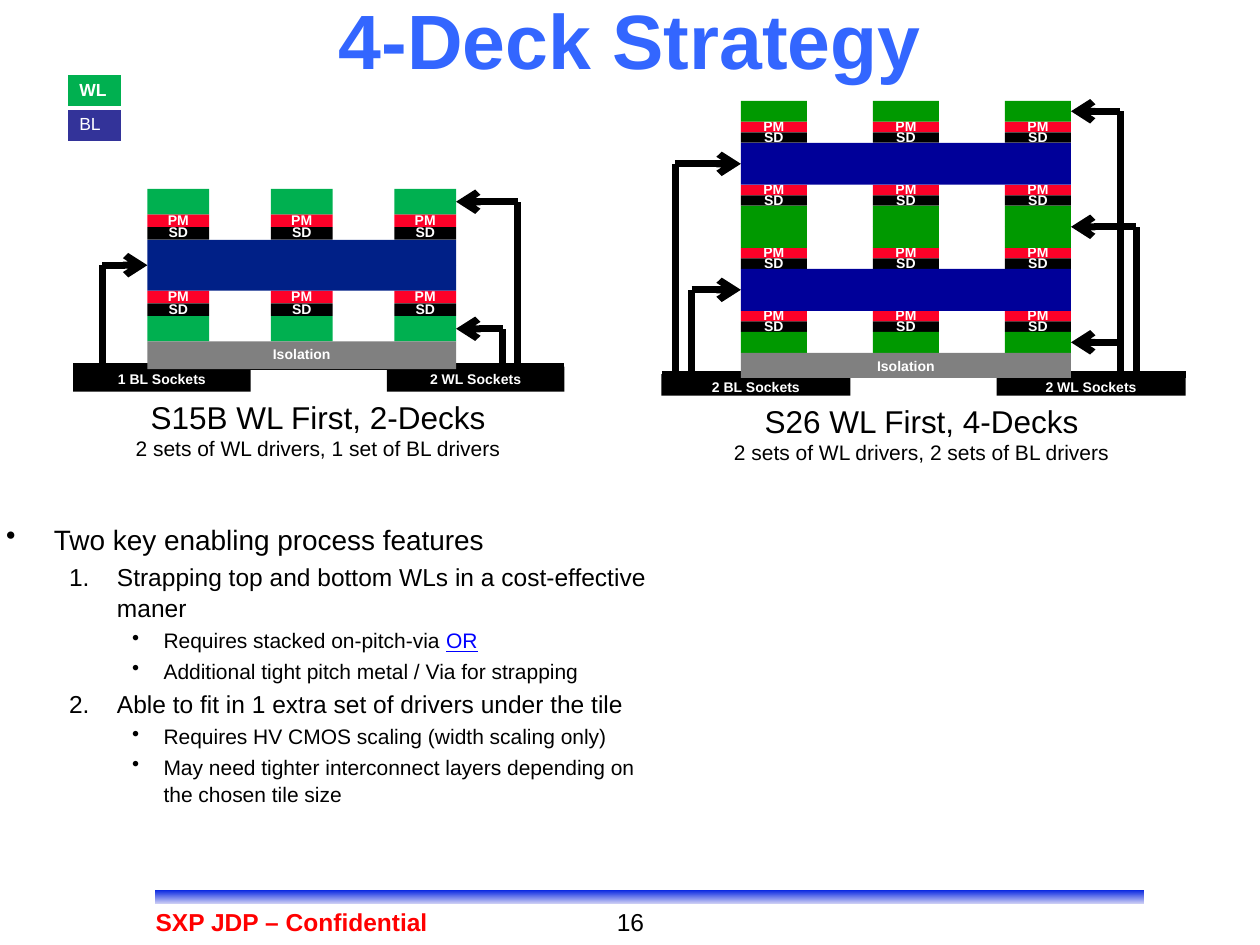
from dataclasses import dataclass

from lxml.etree import SubElement
from pptx import Presentation
from pptx.dml.color import RGBColor
from pptx.enum.shapes import MSO_CONNECTOR as CONN, MSO_SHAPE as SHAPE
from pptx.enum.text import MSO_ANCHOR as ANCHOR, PP_ALIGN as ALIGN
from pptx.oxml.ns import qn
from pptx.util import Inches, Pt

BLACK = RGBColor(0x00, 0x00, 0x00)
WHITE = RGBColor(0xFF, 0xFF, 0xFF)
RED = RGBColor(0xFF, 0x00, 0x00)
PM_RED = RGBColor(0xFC, 0x01, 0x28)
GRAY = RGBColor(0x80, 0x80, 0x80)
TITLE_BLUE = RGBColor(0x33, 0x66, 0xFF)
LINK_BLUE = RGBColor(0x00, 0x00, 0xFF)
KEY_GREEN = RGBColor(0x00, 0xB0, 0x50)
KEY_BLUE = RGBColor(0x33, 0x33, 0x99)
NAVY = RGBColor(0x00, 0x20, 0x87)
DEEP_GREEN = RGBColor(0x00, 0x99, 0x00)
DEEP_BLUE = RGBColor(0x00, 0x00, 0x99)
BAR_TOP = RGBColor(0x00, 0x20, 0xE0)
BAR_BOTTOM = RGBColor(0xDA, 0xDA, 0xF6)

COLUMNS = 5
LEVELS = [(16, 0.38, -0.38), (14, 0.88, -0.38), (12, 1.25, -0.25)]
FEATURES = [
    (0, ["Two key enabling process features"]),
    (1, ["Strapping top and bottom WLs in a cost-effective maner"]),
    (2, ["Requires stacked on-pitch-via ", "OR"]),
    (2, ["Additional tight pitch metal / Via for strapping"]),
    (1, ["Able to fit in 1 extra set of drivers under the tile"]),
    (2, ["Requires HV CMOS scaling (width scaling only)"]),
    (2, ["May need tighter interconnect layers depending on the chosen tile size"]),
]


@dataclass
class Stack:
    layers: str
    left: float
    top: float
    width: float
    unit: float
    wl: RGBColor
    bl: RGBColor
    isolation: float
    base: tuple
    base_y: float
    socket: tuple
    sockets: tuple
    trunks: tuple
    caption: tuple

    def y(self, layer):
        return self.top + layer * self.unit


TWO_DECK = Stack(
    "WPBBPW", 1.17, 1.5, 2.45, 0.2017, KEY_GREEN, NAVY, 0.22,
    (0.58, 4.48), 2.91, (1.41, 0.2), ("1 BL Sockets", "2 WL Sockets"),
    ((0.81, [3]), (3.99, [5.5]), (4.11, [0.5])),
    ("S15B WL First, 2-Decks", "2 sets of WL drivers, 1 set of BL drivers", 0.96, 3.11, 3.13))
FOUR_DECK = Stack(
    "WPBBPWWPBBPW", 5.88, 0.8, 2.62, 0.1667, DEEP_GREEN, DEEP_BLUE, 0.2,
    (5.25, 9.41), 2.97, (1.5, 0.17), ("2 BL Sockets", "2 WL Sockets"),
    ((8.89, [0.5, 11.5]), (9.02, [6]), (5.36, [3]), (5.49, [9])),
    ("S26 WL First, 4-Decks", "2 sets of WL drivers, 2 sets of BL drivers", 5.71, 3.14, 3.21))


def write(p, text, size=8, color=BLACK, bold=False, underline=False, align=None, spacing=None):
    r = p.add_run()
    r.text = text
    f = r.font
    f.name, f.size, f.bold, f.underline = "Arial", Pt(size), bold, underline
    f.color.rgb = color
    if align is not None:
        p.alignment = align
    if spacing:
        p.line_spacing = spacing


def add_text(slide, box, text, anchor=ANCHOR.TOP, wrap=True, **fmt):
    tf = slide.shapes.add_textbox(*map(Inches, box)).text_frame
    tf.word_wrap, tf.vertical_anchor = wrap, anchor
    if text:
        write(tf.paragraphs[0], text, **fmt)
    return tf


def add_block(slide, box, color, text="", anchor=ANCHOR.TOP):
    sp = slide.shapes.add_shape(SHAPE.RECTANGLE, *map(Inches, box))
    sp.shadow.inherit = False
    sp.fill.solid()
    sp.fill.fore_color.rgb = color
    sp.line.fill.background()
    if text:
        tf = sp.text_frame
        tf.vertical_anchor = anchor
        write(tf.paragraphs[0], text, color=WHITE, bold=True, align=ALIGN.CENTER, spacing=0.9)
    return sp


def add_line(slide, x1, y1, x2, y2, arrow=False):
    cn = slide.shapes.add_connector(CONN.STRAIGHT, *map(Inches, (x1, y1, x2, y2)))
    cn.line.width = Pt(4)
    cn.line.color.rgb = BLACK
    if arrow:
        SubElement(cn.line._get_or_add_ln(), qn("a:tailEnd"), type="arrow")
    SubElement(cn._element.spPr, qn("a:effectLst"))


def add_trunk(slide, st, x, layers):
    tip = st.left if x < st.left else st.left + st.width
    add_line(slide, x, st.base_y, x, st.y(min(layers)))
    for layer in layers:
        add_line(slide, x, st.y(layer), tip, st.y(layer), arrow=True)


def add_stack(slide, st):
    for x, layers in st.trunks:
        add_trunk(slide, st, x, layers)
    start, end = st.base
    add_line(slide, end, st.base_y, start, st.base_y)
    w, h = st.socket
    for x, label in zip((start, end - w), st.sockets):
        add_block(slide, (x, st.base_y, w, h), BLACK, label)

    pillar = st.width / COLUMNS
    xs = [st.left + i * pillar for i in range(0, COLUMNS, 2)]
    half = st.unit / 2
    rows = list(enumerate(st.layers))
    for y in (st.y(i) for i, kind in rows if kind == "P"):
        for x in xs:
            add_block(slide, (x, y, pillar, half), PM_RED, "PM", ANCHOR.MIDDLE)
            add_block(slide, (x, y + half, pillar, half), BLACK, "SD", ANCHOR.MIDDLE)
    for i, kind in rows:
        if kind == "W":
            for x in xs:
                add_block(slide, (x, st.y(i), pillar, st.unit), st.wl)
        elif kind == "B":
            add_block(slide, (st.left, st.y(i), st.width, st.unit), st.bl)
    add_block(slide, (st.left, st.y(len(rows)), st.width, st.isolation), GRAY, "Isolation")

    name, drivers, x, y, w = st.caption
    tf = add_text(slide, (x, y, w, 0.61), name, wrap=False, size=18, align=ALIGN.CENTER)
    write(tf.add_paragraph(), drivers, size=12, align=ALIGN.CENTER)


def add_key(slide):
    table = slide.shapes.add_table(2, 1, *map(Inches, (0.53, 0.59, 0.44, 0.53))).table
    table.first_row = table.horz_banding = False
    for i, (label, color) in enumerate((("WL", KEY_GREEN), ("BL", KEY_BLUE))):
        table.rows[i].height = Inches(0.265)
        cell = table.cell(i, 0)
        write(cell.text_frame.paragraphs[0], label, size=10, color=WHITE, bold=i == 0)
        tc_pr = cell._tc.get_or_add_tcPr()
        for side in ("lnL", "lnR", "lnT", "lnB"):
            pts = 3 if (i, side) in ((0, "lnB"), (1, "lnT")) else 1
            ln = SubElement(tc_pr, qn(f"a:{side}"), w=str(Pt(pts)))
            SubElement(SubElement(ln, qn("a:solidFill")), qn("a:srgbClr"), val=str(WHITE))
        cell.fill.solid()
        cell.fill.fore_color.rgb = color


def add_features(slide):
    tf = add_text(slide, (-0.05, 4.08, 5.4, 2.75), "")
    for i, (level, parts) in enumerate(FEATURES):
        p = tf.add_paragraph() if i else tf.paragraphs[0]
        size, margin, indent = LEVELS[level]
        p.level = level
        p.line_spacing = 1.07
        if i:
            p.space_before = Pt(2)
        pr = p._p.get_or_add_pPr()
        pr.set("marL", str(Inches(margin)))
        pr.set("indent", str(Inches(indent)))
        if level == 1:
            SubElement(pr, qn("a:buAutoNum"), type="arabicPeriod")
        else:
            SubElement(pr, qn("a:buChar"), char="•")
        for part in parts:
            link = part == "OR"
            write(p, part, size=size, color=LINK_BLUE if link else BLACK, underline=link)


def add_footer(slide):
    bar = add_block(slide, (1.22, 7.06, 7.87, 0.12), BAR_TOP)
    bar.line.color.rgb, bar.line.width = WHITE, Pt(1)
    bar.fill.gradient()
    bar.fill.gradient_angle = 270
    for stop, color in zip(bar.fill.gradient_stops, (BAR_TOP, BAR_BOTTOM)):
        stop.color.rgb = color
    add_text(slide, (4.07, 7.15, 1.14, 0.27), "16", size=14, align=ALIGN.RIGHT)
    add_text(slide, (0.72, 7.15, 3.19, 0.26), "SXP JDP – Confidential",
             size=14, color=RED, bold=True, align=ALIGN.CENTER)


def main():
    prs = Presentation()
    prs.slide_width, prs.slide_height = Inches(10), Inches(7.5)
    slide = prs.slides.add_slide(prs.slide_layouts[6])
    add_text(slide, (0.5, 0.1, 9, 0.42), "4-Deck Strategy", ANCHOR.MIDDLE,
             size=44, color=TITLE_BLUE, bold=True, align=ALIGN.CENTER)
    add_features(slide)
    add_key(slide)
    for st in (FOUR_DECK, TWO_DECK):
        add_stack(slide, st)
    add_footer(slide)
    prs.save("out.pptx")


if __name__ == "__main__":
    main()
